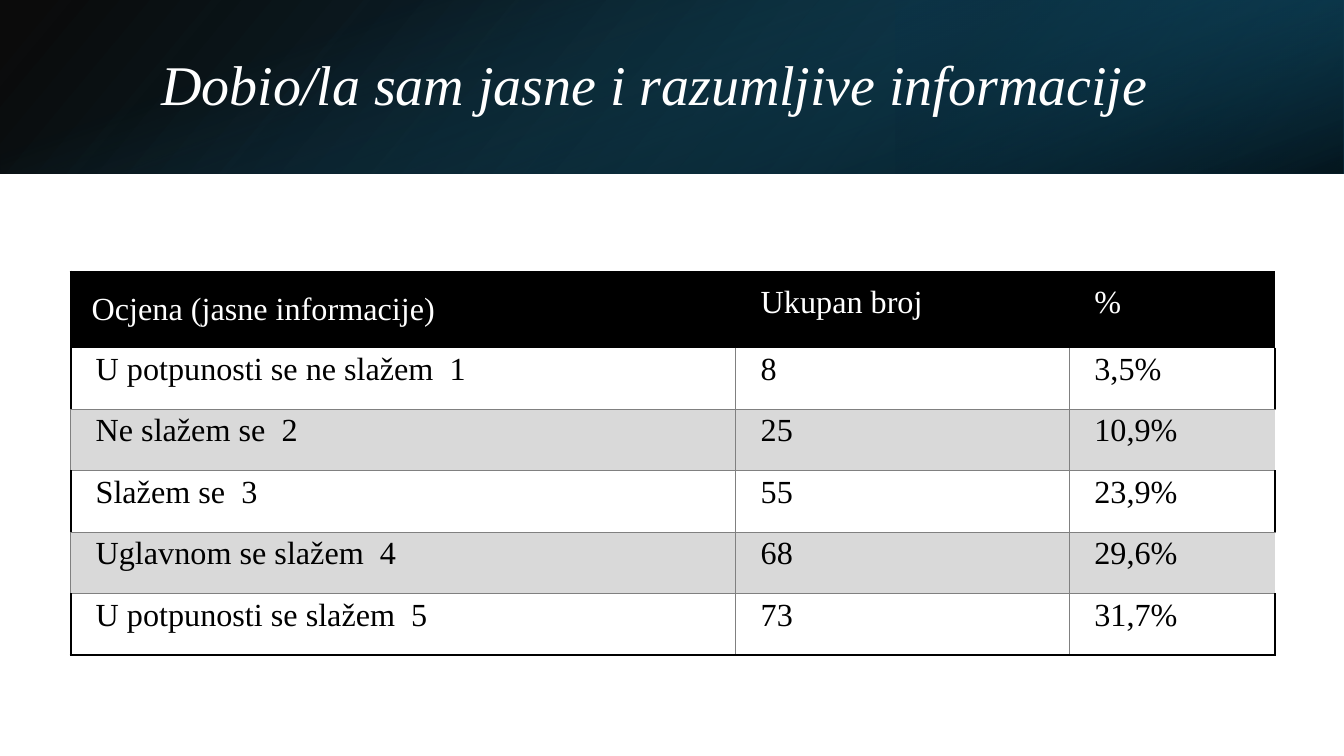
from dataclasses import dataclass

from lxml import etree
from pptx import Presentation
from pptx.dml.color import RGBColor
from pptx.enum.shapes import MSO_SHAPE
from pptx.enum.text import MSO_ANCHOR, PP_ALIGN
from pptx.oxml.ns import qn
from pptx.slide import Slide
from pptx.table import _Cell as Cell
from pptx.text.text import _Paragraph as Paragraph
from pptx.util import Cm, Pt

RECTANGLE = MSO_SHAPE.RECTANGLE
LEFT, JUSTIFY = PP_ALIGN.LEFT, PP_ALIGN.JUSTIFY
TOP, MIDDLE = MSO_ANCHOR.TOP, MSO_ANCHOR.MIDDLE
TITLE_ONLY = 5
NO_STYLE_NO_GRID = "{2D5ABB26-0587-4C30-8999-92F81FD0307C}"


@dataclass(frozen=True)
class Theme:
    font: str = "Times New Roman"
    title_size: float = 40
    table_size: float = 23
    line_spacing: float = 16
    white: str = "FFFFFF"
    black: str = "000000"
    stripe: str = "D9D9D9"
    grid: str = "808080"
    teal: str = "156082"
    teal_mid: str = "104862"
    teal_dark: str = "0B3041"


@dataclass(frozen=True)
class Stop:
    position: float
    color: str
    opacity: int


@dataclass(frozen=True)
class Band:
    left: float
    top: float
    width: float
    height: float
    stops: tuple[Stop, Stop]
    angle: int
    rotation: int = 0
    flipped: bool = False


@dataclass(frozen=True)
class Border:
    color: str
    width: float


THEME = Theme()
THIN = Border(THEME.grid, 0.5)
THICK = Border(THEME.black, 1.5)

SLIDE_WIDTH, SLIDE_HEIGHT, BANNER_HEIGHT = 33.87, 19.05, 4.37
TURNED_OFFSET = (SLIDE_WIDTH - BANNER_HEIGHT) / 2
BANDS = (
    Band(0, 0, SLIDE_WIDTH, BANNER_HEIGHT,
         (Stop(0, THEME.black, 96), Stop(1, THEME.teal_mid, 100)), 140, flipped=True),
    Band(22.58, 0, 11.29, BANNER_HEIGHT,
         (Stop(0.19, THEME.teal_dark, 68), Stop(1, THEME.teal, 79)), 320, 180, True),
    Band(TURNED_OFFSET, -TURNED_OFFSET, BANNER_HEIGHT, SLIDE_WIDTH,
         (Stop(0.23, THEME.teal, 0), Stop(0.99, THEME.black, 74)), 340, 90),
)

COLUMN_WIDTHS = (16.76, 8.41, 5.18)
HEADER_HEIGHT, ROW_HEIGHT = 1.92, 1.55
ROWS = (
    ("Ocjena (jasne informacije)", "Ukupan broj", "%"),
    ("U potpunosti se ne slažem  1", "8", "3,5%"),
    ("Ne slažem se  2", "25", "10,9%"),
    ("Slažem se  3", "55", "23,9%"),
    ("Uglavnom se slažem  4", "68", "29,6%"),
    ("U potpunosti se slažem  5", "73", "31,7%"),
)


def style_span(para: Paragraph, size: float, color: str, italic: bool = False) -> None:
    font = para.runs[0].font
    font.name, font.size, font.italic = THEME.font, Pt(size), italic
    font.color.rgb = RGBColor.from_string(color)


def add_band(slide: Slide, band: Band) -> None:
    """Draw one translucent gradient rectangle behind the title."""
    box = slide.shapes.add_shape(
        RECTANGLE, Cm(band.left), Cm(band.top), Cm(band.width), Cm(band.height))
    box.shadow.inherit = False
    box.line.fill.background()
    box.rotation = band.rotation
    if band.flipped:
        box.element.find(".//" + qn("a:xfrm")).set("flipH", "1")
    box.fill.gradient()
    box.fill.gradient_angle = 360 - band.angle
    for gradient_stop, stop in zip(box.fill.gradient_stops, band.stops):
        gradient_stop.color.rgb = RGBColor.from_string(stop.color)
        gradient_stop.position = stop.position
    for color, stop in zip(box.element.iter(qn("a:srgbClr")), band.stops):
        etree.SubElement(color, qn("a:alpha"), val=str(stop.opacity * 1000))
    slide.shapes.title.element.addprevious(box.element)


def add_title(slide: Slide, text: str) -> None:
    title = slide.shapes.title
    title.left, title.top, title.width, title.height = Cm(3.81), Cm(0.97), Cm(27.89), Cm(2.44)
    title.text_frame.text = text
    title.text_frame.vertical_anchor = MIDDLE
    para = title.text_frame.paragraphs[0]
    para.alignment, para.line_spacing = LEFT, 0.9
    style_span(para, THEME.title_size, THEME.white, italic=True)


def cell_borders(row: int, column: int) -> dict[str, Border]:
    """Thick outer frame, thin inner grid; striped rows have a thin frame."""
    first, last = column == 0, column == len(COLUMN_WIDTHS) - 1
    if row == 0:
        return {"L": THICK, "T": THICK} if first else {"T": THICK}
    if row % 2 == 0:
        return {"L": THIN, "T": THIN} if last else {"L": THIN, "R": THIN, "T": THIN}
    return {
        "L": THICK if first else THIN,
        "R": THICK if last else THIN,
        "B": THICK if row == len(ROWS) - 1 else THIN,
    }


def draw_borders(cell: Cell, borders: dict[str, Border]) -> None:
    properties = cell._tc.get_or_add_tcPr()
    for index, (side, border) in enumerate(borders.items()):
        line = etree.Element(qn(f"a:ln{side}"), w=str(Pt(border.width)))
        fill = etree.SubElement(line, qn("a:solidFill"))
        etree.SubElement(fill, qn("a:srgbClr"), val=border.color)
        properties.insert(index, line)


def fill_cell(cell: Cell, row: int, column: int) -> None:
    header = row == 0
    cell.margin_left, cell.margin_right = Cm(0.53), 0
    cell.margin_top = cell.margin_bottom = Cm(0.43)
    cell.vertical_anchor = MIDDLE if header else TOP
    if row % 2:
        cell.fill.background()
    else:
        cell.fill.solid()
        cell.fill.fore_color.rgb = RGBColor.from_string(THEME.black if header else THEME.stripe)
    draw_borders(cell, cell_borders(row, column))

    cell.text_frame.text = ROWS[row][column]
    para = cell.text_frame.paragraphs[0]
    para.alignment = JUSTIFY
    if (row, column) != (0, 0):
        para.line_spacing = Pt(THEME.line_spacing)
        para._p.get_or_add_pPr().set("marL", str(Cm(0.1)))
    style_span(para, THEME.table_size, THEME.white if header else THEME.black)


def add_ratings_table(slide: Slide) -> None:
    height = HEADER_HEIGHT + ROW_HEIGHT * (len(ROWS) - 1)
    frame = slide.shapes.add_table(
        len(ROWS), len(COLUMN_WIDTHS), Cm(1.78), Cm(6.84), Cm(sum(COLUMN_WIDTHS)), Cm(height))
    frame.element.find(".//" + qn("a:tableStyleId")).text = NO_STYLE_NO_GRID
    table = frame.table
    for column, width in zip(table.columns, COLUMN_WIDTHS):
        column.width = Cm(width)
    for row in range(len(ROWS)):
        table.rows[row].height = Cm(ROW_HEIGHT if row else HEADER_HEIGHT)
        for column in range(len(COLUMN_WIDTHS)):
            fill_cell(table.cell(row, column), row, column)


def main() -> None:
    deck = Presentation()
    deck.slide_width, deck.slide_height = Cm(SLIDE_WIDTH), Cm(SLIDE_HEIGHT)
    page = deck.slides.add_slide(deck.slide_layouts[TITLE_ONLY])
    for band in BANDS:
        add_band(page, band)
    add_title(page, "Dobio/la sam jasne i razumljive informacije")
    add_ratings_table(page)
    deck.save("out.pptx")


if __name__ == "__main__":
    main()
